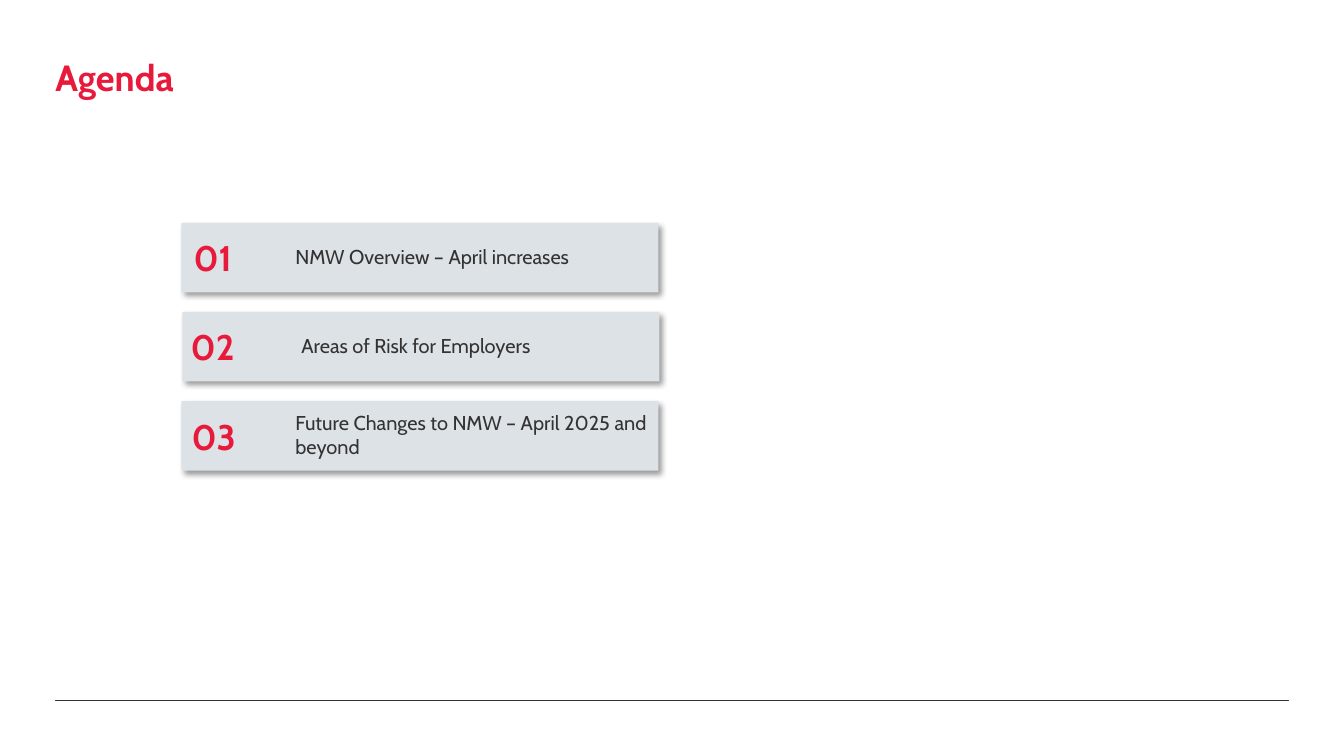
from lxml import etree
from pptx import Presentation
from pptx.dml.color import RGBColor
from pptx.enum.shapes import MSO_CONNECTOR, MSO_SHAPE
from pptx.enum.text import MSO_ANCHOR, PP_ALIGN
from pptx.oxml.ns import qn
from pptx.util import Inches, Pt

TITLE = "Agenda"
# label, shift of the bar, extra indent of the label, shift of the number
TOPICS = [
    ("NMW Overview – April increases", 0, 0, 0),
    ("Areas of Risk for Employers", 0.01, 0.05, 0),
    ("Future Changes to NMW – April 2025 and beyond", 0, 0, 0.01),
]

RED = RGBColor(0xE8, 0x1A, 0x3B)
DARK = RGBColor(0x33, 0x33, 0x33)
PALE = RGBColor(0xDD, 0xE2, 0xE7)
FONT = "Cabin"
RECTANGLE = MSO_SHAPE.RECTANGLE
STRAIGHT = MSO_CONNECTOR.STRAIGHT
TOP, MIDDLE = MSO_ANCHOR.TOP, MSO_ANCHOR.MIDDLE
LEFT, CENTER = PP_ALIGN.LEFT, PP_ALIGN.CENTER

WIDTH, HEIGHT = 13.33, 7.5
MARGIN = 0.55
RULE_TOP = 6.95
BAR_LEFT, BAR_TOP, BAR_WIDTH, BAR_HEIGHT = 1.8, 2.21, 4.73, 0.69
PITCH = 0.885
LABEL_INSET = 1.13
NUMBER_WIDTH, NUMBER_HEIGHT = 0.56, 0.43


def write(box, text, size, color, insets, bold=False, align=LEFT, anchor=MIDDLE):
    frame = box.text_frame
    frame.word_wrap = True
    frame.vertical_anchor = anchor
    (frame.margin_left, frame.margin_top,
     frame.margin_right, frame.margin_bottom) = map(Inches, insets)
    para = frame.paragraphs[0]
    para.alignment = align
    span = para.add_run()
    span.text = text
    span.font.name = FONT
    span.font.size = Pt(size)
    span.font.bold = bold
    span.font.color.rgb = color
    return para


def add_text_box(page, left, top, width, height):
    return page.shapes.add_textbox(*map(Inches, (left, top, width, height)))


def add_bar(page, left, top):
    bar = page.shapes.add_shape(
        RECTANGLE, *map(Inches, (left, top, BAR_WIDTH, BAR_HEIGHT)))
    bar.fill.solid()
    bar.fill.fore_color.rgb = PALE
    bar.line.fill.background()
    bar.shadow.inherit = False
    effects = bar._element.spPr.find(qn("a:effectLst"))
    shadow = etree.SubElement(
        effects, qn("a:outerShdw"), blurRad=str(Pt(4)), dist=str(Pt(3)),
        dir="2700000", algn="tl", rotWithShape="0")
    tint = etree.SubElement(shadow, qn("a:srgbClr"), val="000000")
    etree.SubElement(tint, qn("a:alpha"), val="40000")
    return bar


def main():
    deck = Presentation()
    deck.slide_width, deck.slide_height = Inches(WIDTH), Inches(HEIGHT)
    page = deck.slides.add_slide(deck.slide_layouts[6])

    rule = page.shapes.add_connector(
        STRAIGHT, *map(Inches, (MARGIN, RULE_TOP, WIDTH - MARGIN, RULE_TOP)))
    rule.line.color.rgb = DARK
    rule.line.width = Pt(0.5)
    etree.SubElement(rule._element.spPr, qn("a:effectLst"))

    title = add_text_box(page, MARGIN, 0.63, WIDTH - 2 * MARGIN, 0.35)
    heading = write(title, TITLE, 26, RED, (0, 0, 0, 0), bold=True, anchor=TOP)
    heading.line_spacing = 0.8

    for row, (label, bar_shift, indent, number_shift) in enumerate(TOPICS):
        top = BAR_TOP + row * PITCH
        bar = add_bar(page, BAR_LEFT + bar_shift, top)
        write(bar, label, 14.3, DARK, (LABEL_INSET + indent, 0.06, 0.06, 0.09))
        number = add_text_box(
            page, BAR_LEFT + number_shift, top + (BAR_HEIGHT - NUMBER_HEIGHT) / 2,
            NUMBER_WIDTH, NUMBER_HEIGHT)
        write(number, f"{row + 1:02}", 25.4, RED, (0.06, 0, 0, 0),
              bold=True, align=CENTER)

    deck.save("out.pptx")


if __name__ == "__main__":
    main()
